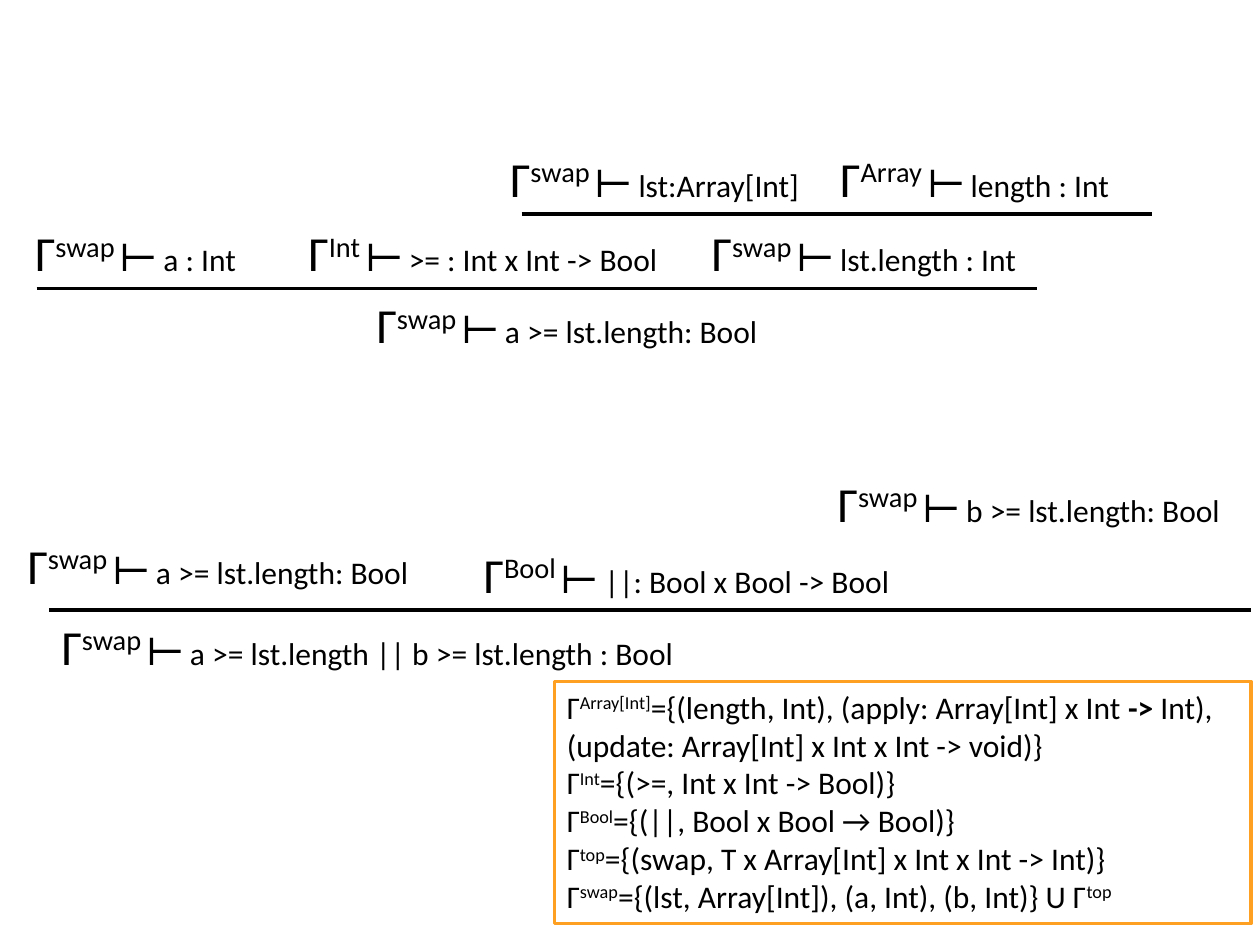
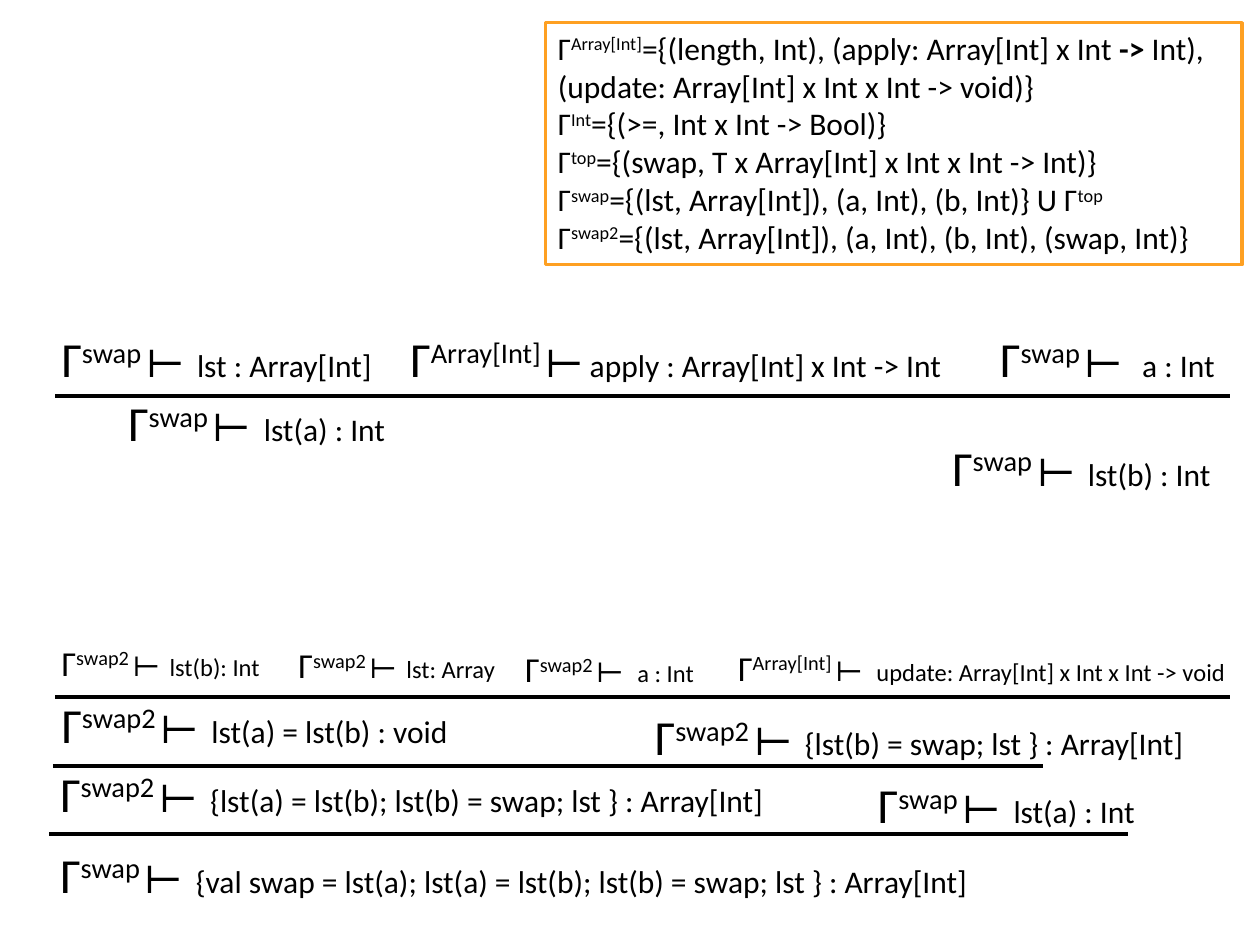
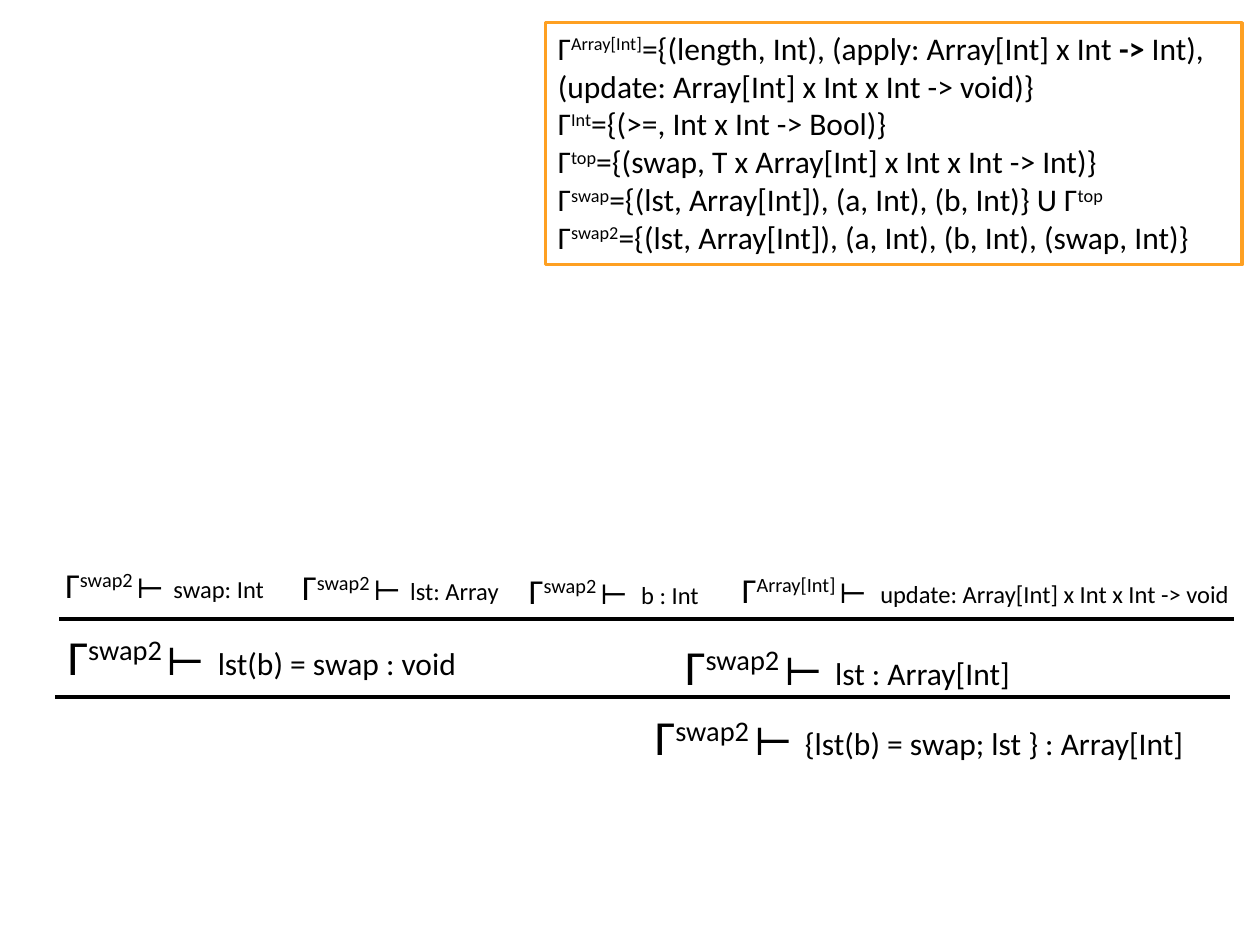
from pptx import Presentation
from pptx.dml.color import RGBColor
from pptx.enum import shapes, text
from pptx.oxml.ns import qn
from pptx.util import Inches, Pt

INK, PAPER, FRAME = "000000", "FFFFFF", "FEA022"
BODY_FONT, SYMBOL_FONT = "Calibri", "Arial"
LARGE, SMALL = (28, 18, 0.57), (20, 14, 0.44)  # symbol size, claim size, box height
WIDE_TURNSTILE = "⊢ "

# Typing environments listed in the framed box: ^superscript^, *bold*
ARRAY_ENV = ("Γ^Array[Int]^={(length, Int), (apply: Array[Int] x Int *-> *Int), "
             "(update: Array[Int] x Int x Int -> void)}")
INT_ENV = "Γ^Int^={(>=, Int x Int -> Bool)}"
BOOL_ENV = "Γ^Bool^={(||, Bool x Bool → Bool)}"
TOP_ENV = "Γ^top^={(swap, T x Array[Int] x Int x Int -> Int)}"
SWAP_ENV = "Γ^swap^={(lst, Array[Int]), (a, Int), (b, Int)} U Γ^top^"
SWAP2_ENV = "Γ^swap2^={(lst, Array[Int]), (a, Int), (b, Int), (swap, Int)}"
BLOCK_ENVS = [ARRAY_ENV, INT_ENV, TOP_ENV, SWAP_ENV, SWAP2_ENV]


def color(value):
    return RGBColor.from_string(value)


def add_run(p, content, size, font=BODY_FONT, superscript=False, bold=False):
    r = p.add_run()
    r.text = content
    r.font.size = Pt(size)
    r.font.name = font
    r.font.color.rgb = color(INK)
    if bold:
        r.font.bold = True
    if superscript:
        r._r.get_or_add_rPr().set("baseline", "30000")


def add_judgement(s, x, y, width, env, claim, scale=LARGE, turnstile="⊢"):
    """One typing judgement: environment, turnstile, claim."""
    symbol_size, claim_size, height = scale
    sp = s.shapes.add_textbox(Inches(x), Inches(y), Inches(width), Inches(height))
    tf = sp.text_frame
    tf.word_wrap = True
    tf.auto_size = text.MSO_AUTO_SIZE.SHAPE_TO_FIT_TEXT
    p = tf.paragraphs[0]
    add_run(p, "Γ", symbol_size)
    add_run(p, env, symbol_size, superscript=True)
    add_run(p, turnstile, symbol_size, SYMBOL_FONT)
    add_run(p, claim, claim_size)


def add_rule(s, x1, x2, y):
    """The bar between premises and conclusion."""
    line = s.shapes.add_connector(shapes.MSO_CONNECTOR.STRAIGHT,
                                  Inches(x1), Inches(y), Inches(x2), Inches(y))
    line.line.color.rgb = color(INK)
    line.line.width = Pt(2.25)
    sp_pr = line._element.spPr
    sp_pr.append(sp_pr.makeelement(qn("a:effectLst"), {}))


def add_environments(s, x, y, envs):
    """Framed box that lists the environments."""
    sp = s.shapes.add_shape(shapes.MSO_SHAPE.RECTANGLE,
                            Inches(x), Inches(y), Inches(5.53), Inches(1.92))
    sp.shadow.inherit = False
    sp.fill.solid()
    sp.fill.fore_color.rgb = color(PAPER)
    sp.line.color.rgb = color(FRAME)
    sp.line.width = Pt(2)
    tf = sp.text_frame
    tf.word_wrap = True
    tf.auto_size = text.MSO_AUTO_SIZE.SHAPE_TO_FIT_TEXT
    tf.vertical_anchor = text.MSO_ANCHOR.TOP
    for i, env in enumerate(envs):
        p = tf.add_paragraph() if i else tf.paragraphs[0]
        p.alignment = text.PP_ALIGN.LEFT
        for j, part in enumerate(env.split("^")):
            for k, piece in enumerate(part.split("*")):
                if piece:
                    add_run(p, piece, 18, superscript=j % 2 == 1, bold=k % 2 == 1)


def add_update_premises(s, x, y, value, index):
    """The four small premises of an array update, with their rule."""
    add_judgement(s, x, y, 2.41, "swap2", f" {value}: Int", SMALL)
    add_judgement(s, x + 1.88, y + 0.02, 2.41, "swap2", " lst: Array", SMALL)
    add_judgement(s, x + 3.68, y + 0.05, 2.06, "swap2", f"{index} : Int", SMALL, WIDE_TURNSTILE)
    add_judgement(s, x + 5.37, y + 0.04, 4.25, "Array[Int]",
                  "update: Array[Int] x Int x Int -> void", SMALL, WIDE_TURNSTILE)
    add_rule(s, x + 0.05, x + 9.37, y + 0.49)


def add_block_tail(s):
    """Judgement shared by the two block derivations."""
    add_judgement(s, 5.1, 5.56, 4.8, "swap2", " {lst(b) = swap; lst } : Array[Int]")


def build_condition(s):
    # Comparison of a with the length
    add_judgement(s, 3.95, 1.13, 2.68, "swap", "lst:Array[Int]")
    add_judgement(s, 6.57, 1.13, 2.68, "Array", "length : Int")
    add_rule(s, 4.14, 9.14, 1.7)
    add_judgement(s, 0.18, 1.72, 2.06, "swap", "a : Int")
    add_judgement(s, 2.35, 1.72, 3.3, "Int", ">= : Int x Int -> Bool")
    add_judgement(s, 5.55, 1.72, 2.68, "swap", "lst.length : Int")
    add_rule(s, 0.29, 8.23, 2.29)
    add_judgement(s, 2.89, 2.29, 3.35, "swap", "a >= lst.length: Bool")
    # Disjunction of both comparisons
    add_judgement(s, 6.55, 3.71, 3.35, "swap", "b >= lst.length: Bool")
    add_judgement(s, 0.12, 4.2, 3.35, "swap", "a >= lst.length: Bool")
    add_judgement(s, 3.74, 4.27, 3.69, "Bool", "||: Bool x Bool -> Bool")
    add_rule(s, 0.39, 9.93, 4.84)
    add_judgement(s, 0.39, 4.84, 5.36, "swap", "a >= lst.length || b >= lst.length : Bool")
    add_environments(s, 4.4, 5.41, [ARRAY_ENV, INT_ENV, BOOL_ENV, TOP_ENV, SWAP_ENV])


def build_swap_block(s):
    add_environments(s, 4.33, 0.18, BLOCK_ENVS)
    # Array access
    add_judgement(s, 0.39, 2.56, 2.77, "swap", " lst : Array[Int]")
    add_judgement(s, 3.16, 2.56, 4.73, "Array[Int]", "apply : Array[Int] x Int -> Int")
    add_judgement(s, 7.84, 2.56, 2.06, "swap", "a : Int", turnstile=WIDE_TURNSTILE)
    add_rule(s, 0.44, 9.76, 3.14)
    add_judgement(s, 0.92, 3.07, 2.3, "swap", " lst(a) : Int")
    add_judgement(s, 7.46, 3.42, 2.3, "swap", " lst(b) : Int")
    # Whole block
    add_update_premises(s, 0.39, 5.04, "lst(b)", "a")
    add_judgement(s, 0.39, 5.46, 8.35, "swap2", " lst(a) = lst(b) : void")
    add_block_tail(s)
    add_rule(s, 0.42, 8.28, 6.08)
    add_judgement(s, 0.38, 6.01, 8.35, "swap2",
                  " {lst(a) = lst(b); lst(b) = swap; lst } : Array[Int]")
    add_judgement(s, 6.87, 6.1, 2.3, "swap", " lst(a) : Int")
    add_rule(s, 0.39, 8.95, 6.62)
    add_judgement(s, 0.38, 6.65, 9.02, "swap",
                  " {val swap = lst(a); lst(a) = lst(b); lst(b) = swap; lst } : Array[Int]")


def build_block_end(s):
    add_environments(s, 4.33, 0.18, BLOCK_ENVS)
    add_update_premises(s, 0.42, 4.42, "swap", "b")
    add_judgement(s, 0.44, 4.92, 4.09, "swap2", " lst(b) = swap : void")
    add_judgement(s, 5.34, 5, 4.8, "swap2", " lst : Array[Int]")
    add_rule(s, 0.44, 9.76, 5.53)
    add_block_tail(s)


def main():
    prs = Presentation()
    prs.slide_width, prs.slide_height = Inches(10), Inches(7.5)
    blank = prs.slide_layouts[6]
    for build in (build_condition, build_swap_block, build_block_end):
        build(prs.slides.add_slide(blank))
    prs.save("out.pptx")


if __name__ == "__main__":
    main()
